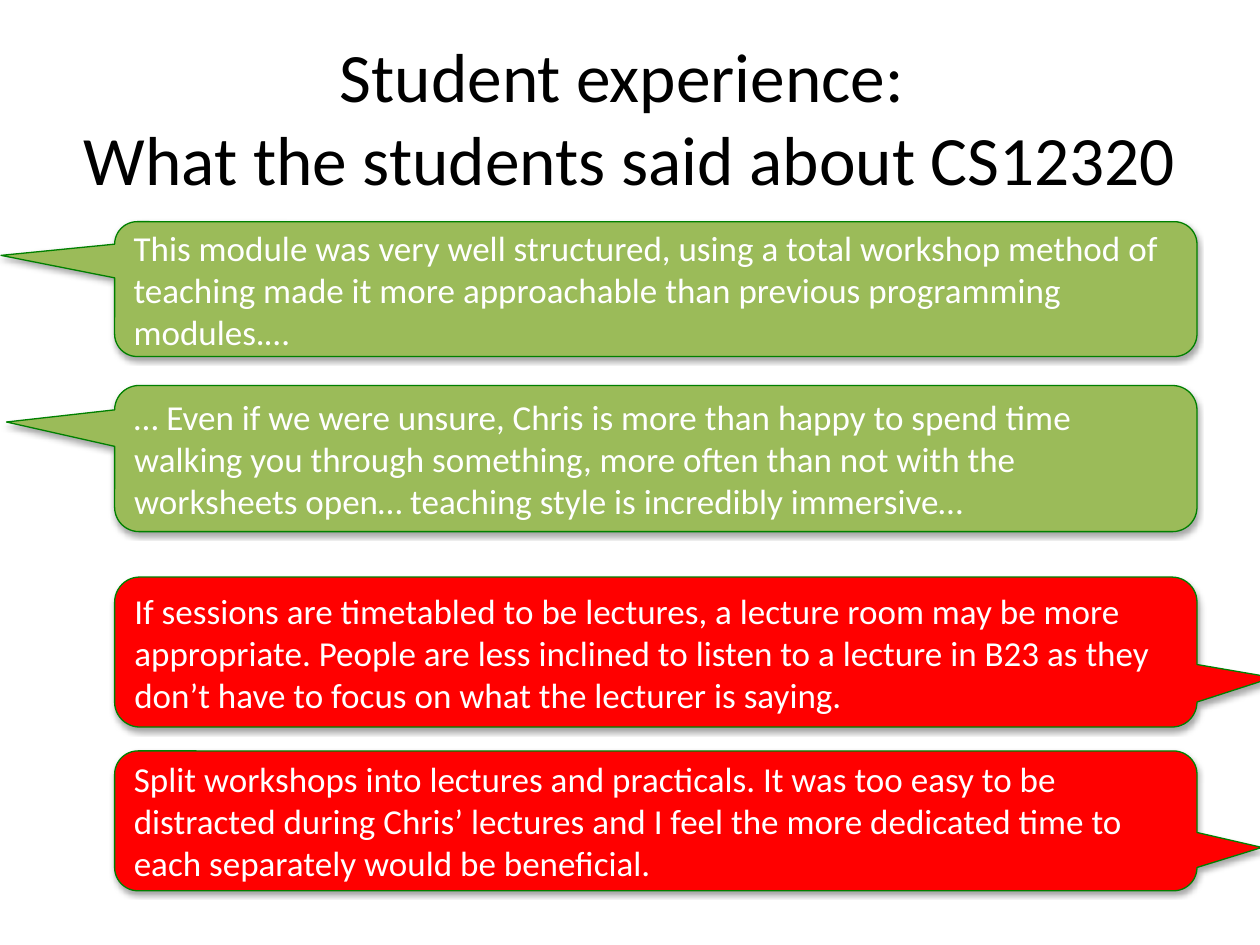
from lxml import etree
from pptx import Presentation
from pptx.dml.color import RGBColor
from pptx.enum.shapes import MSO_SHAPE
from pptx.enum.text import MSO_ANCHOR, MSO_AUTO_SIZE, PP_ALIGN
from pptx.oxml.ns import qn
from pptx.util import Inches, Pt

CALLOUT = MSO_SHAPE.ROUNDED_RECTANGULAR_CALLOUT
MIDDLE = MSO_ANCHOR.MIDDLE
FIXED = MSO_AUTO_SIZE.NONE
LEFT, CENTER = PP_ALIGN.LEFT, PP_ALIGN.CENTER
BLACK = RGBColor(0, 0, 0)
WHITE = RGBColor(255, 255, 255)
OLIVE = RGBColor(0x9B, 0xBB, 0x59)
GREEN = RGBColor(0, 0x80, 0)
RED = RGBColor(255, 0, 0)

TITLE = "Student experience: \vWhat the students said about CS12320"
QUOTES = [
    (1.76, 1.07, OLIVE, (-0.605, -0.25),
     "This module was very well structured, using a total workshop method of "
     "teaching made it more approachable than previous programming modules.…"),
    (3.06, 1.16, OLIVE, (-0.6, -0.25),
     "… Even if we were unsure, Chris is more than happy to spend time walking "
     "you through something, more often than not with the worksheets open… "
     "teaching style is incredibly immersive…"),
    (4.58, 1.19, RED, (0.57, 0.17),
     "If sessions are timetabled to be lectures, a lecture room may be more "
     "appropriate. People are less inclined to listen to a lecture in B23 as "
     "they don’t have to focus on what the lecturer is saying."),
    (5.96, 1.11, RED, (0.56, 0.19),
     "Split workshops into lectures and practicals. It was too easy to be "
     "distracted during Chris’ lectures and I feel the more dedicated time to "
     "each separately would be beneficial."),
]
EDGE, WIDTH, ROUND = 0.91, 8.59, 0.167


def write(shape, text, size, color, align):
    frame = shape.text_frame
    frame.text = text
    frame.word_wrap = True
    frame.auto_size = FIXED
    frame.vertical_anchor = MIDDLE
    for para in frame.paragraphs:
        para.alignment = align
        for run in para.runs:
            run.font.name = "Calibri"
            run.font.size = Pt(size)
            run.font.color.rgb = color


def shade(shape):
    shape.shadow.inherit = False
    effects = shape._element.spPr.find(qn("a:effectLst"))
    outer = etree.SubElement(
        effects, qn("a:outerShdw"), blurRad=str(Pt(3.1)), dist=str(Pt(1.8)),
        dir="5400000", rotWithShape="0")
    tint = etree.SubElement(outer, qn("a:srgbClr"), val=str(BLACK))
    etree.SubElement(tint, qn("a:alpha"), val="35000")


def quote(slide, top, height, fill, tip, text):
    box = slide.shapes.add_shape(
        CALLOUT, Inches(EDGE), Inches(top), Inches(WIDTH), Inches(height))
    for index, value in enumerate((*tip, ROUND)):
        box.adjustments[index] = value
    box.fill.solid()
    box.fill.fore_color.rgb = fill
    box.line.color.rgb = GREEN
    box.line.width = Pt(0.75)
    shade(box)
    write(box, text, size=20, color=WHITE, align=LEFT)


def main():
    deck = Presentation()
    deck.slide_width, deck.slide_height = Inches(10), Inches(7.5)
    slide = deck.slides.add_slide(deck.slide_layouts[5])
    title = slide.shapes.title
    title.left, title.top = Inches(0.5), Inches(0.3)
    title.width, title.height = Inches(9), Inches(1.25)
    write(title, TITLE, size=39.6, color=BLACK, align=CENTER)
    for row in QUOTES:
        quote(slide, *row)
    deck.save("out.pptx")


if __name__ == "__main__":
    main()
